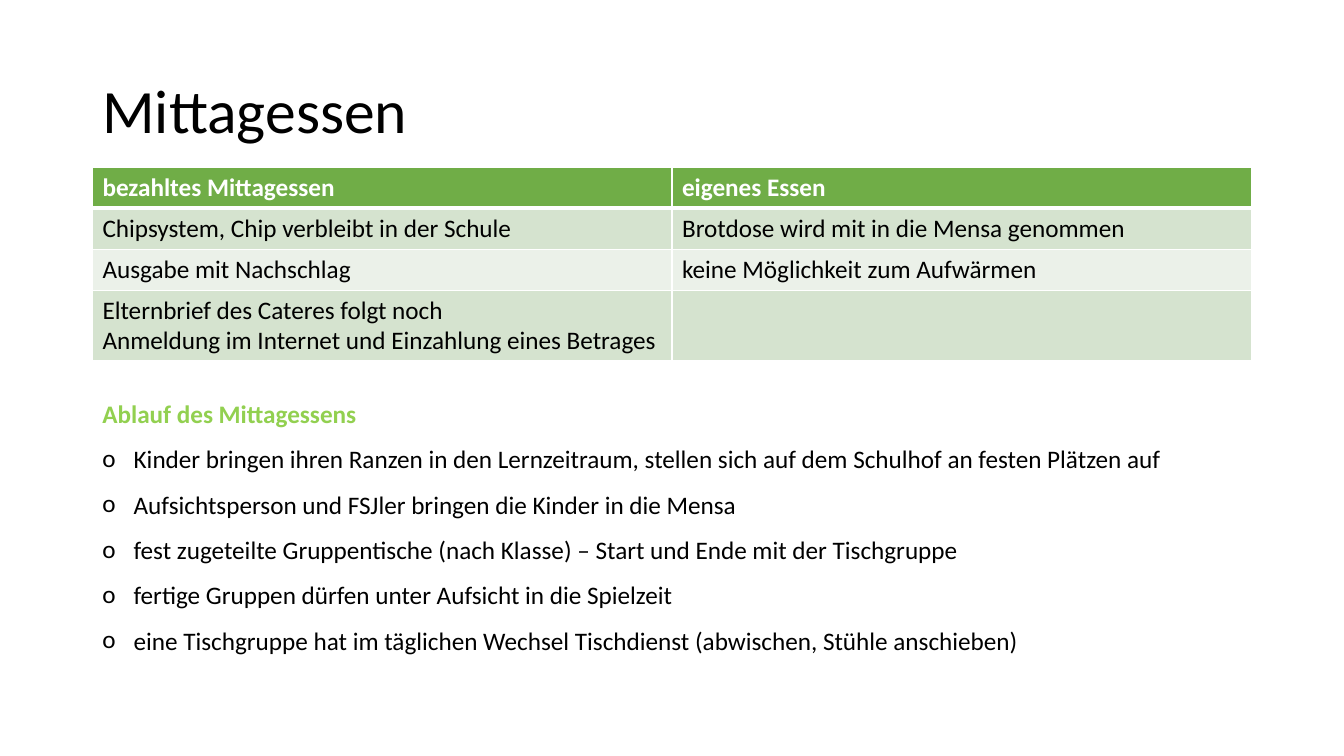
from lxml import etree
from pptx import Presentation
from pptx.dml.color import RGBColor
from pptx.enum.text import MSO_ANCHOR
from pptx.oxml.ns import qn
from pptx.util import Cm, Pt

MIDDLE = MSO_ANCHOR.MIDDLE
FONT = "Calibri"
COLORS = {
    "text": "000000",
    "white": "FFFFFF",
    "header": "70AD47",
    "band_dark": "D5E3CF",
    "band_light": "EBF1E9",
    "accent": "92D050",
}

TITLE = "Mittagessen"
MEAL_OPTIONS = [
    (["bezahltes Mittagessen"], ["eigenes Essen"]),
    (["Chipsystem, Chip verbleibt in der Schule"], ["Brotdose wird mit in die Mensa genommen"]),
    (["Ausgabe mit Nachschlag"], ["keine Möglichkeit zum Aufwärmen"]),
    (["Elternbrief des Cateres folgt noch", "Anmeldung im Internet und Einzahlung eines Betrages"], []),
]
PROCEDURE_HEADING = "Ablauf des Mittagessens"
PROCEDURE_STEPS = [
    "Kinder bringen ihren Ranzen in den Lernzeitraum, stellen sich auf dem Schulhof an festen Plätzen auf",
    "Aufsichtsperson und FSJler bringen die Kinder in die Mensa",
    "fest zugeteilte Gruppentische (nach Klasse) – Start und Ende mit der Tischgruppe",
    "fertige Gruppen dürfen unter Aufsicht in die Spielzeit",
    "eine Tischgruppe hat im täglichen Wechsel Tischdienst (abwischen, Stühle anschieben)",
]

LEFT, WIDTH = Cm(2.33), Cm(29.21)
ROW_HEIGHTS = [Cm(1.03), Cm(1.03), Cm(1.03), Cm(1.78)]
STEP_INDENT = Cm(0.79)


def add_lines(frame, lines, size=18, color="text", bold=False, spacing=1.0):
    paragraphs = []
    for line in lines:
        first_is_free = not frame.paragraphs[0].runs
        paragraph = frame.paragraphs[0] if first_is_free else frame.add_paragraph()
        paragraph.line_spacing = spacing
        run = paragraph.add_run()
        run.text = line
        run.font.name = FONT
        run.font.size = Pt(size)
        run.font.bold = bold
        run.font.color.rgb = RGBColor.from_string(COLORS[color])
        paragraphs.append(paragraph)
    return paragraphs


def add_text_frame(slide, top, height):
    frame = slide.shapes.add_textbox(LEFT, top, WIDTH, height).text_frame
    frame.word_wrap = True
    return frame


def add_bullet(paragraph):
    properties = paragraph._p.get_or_add_pPr()
    properties.set("marL", str(STEP_INDENT))
    properties.set("indent", str(-STEP_INDENT))
    etree.SubElement(properties, qn("a:buFont"), typeface=FONT)
    etree.SubElement(properties, qn("a:buChar"), char="o")


def set_borders(cell, widths):
    properties = cell._tc.get_or_add_tcPr()
    for side, width in widths.items():
        border = etree.SubElement(properties, qn(f"a:ln{side}"), w=str(Pt(width)))
        fill = etree.SubElement(border, qn("a:solidFill"))
        etree.SubElement(fill, qn("a:srgbClr"), val=COLORS["white"])


def add_meal_table(slide):
    columns = len(MEAL_OPTIONS[0])
    table = slide.shapes.add_table(
        len(MEAL_OPTIONS), columns, LEFT, Cm(4.22), WIDTH, sum(ROW_HEIGHTS)
    ).table
    for row, (options, height) in enumerate(zip(MEAL_OPTIONS, ROW_HEIGHTS)):
        table.rows[row].height = height
        is_header = row == 0
        band = "header" if is_header else ("band_light", "band_dark")[row % 2]
        for column, lines in enumerate(options):
            cell = table.cell(row, column)
            set_borders(cell, {
                "L": 1, "R": 1, "T": 3 if row == 1 else 1, "B": 3 if is_header else 1,
            })
            cell.fill.solid()
            cell.fill.fore_color.rgb = RGBColor.from_string(COLORS[band])
            add_lines(cell.text_frame, lines, color="white" if is_header else "text", bold=is_header)


def main():
    presentation = Presentation()
    presentation.slide_width, presentation.slide_height = Cm(33.87), Cm(19.05)
    slide = presentation.slides.add_slide(presentation.slide_layouts[6])

    title = add_text_frame(slide, Cm(1.02), Cm(3.68))
    title.vertical_anchor = MIDDLE
    add_lines(title, [TITLE], size=44, spacing=0.9)

    add_meal_table(slide)

    procedure = add_text_frame(slide, Cm(9.53), Cm(7.19))
    add_lines(procedure, [PROCEDURE_HEADING], color="accent", bold=True, spacing=1.5)
    for step in add_lines(procedure, PROCEDURE_STEPS, spacing=1.5):
        add_bullet(step)

    presentation.save("out.pptx")


if __name__ == "__main__":
    main()
